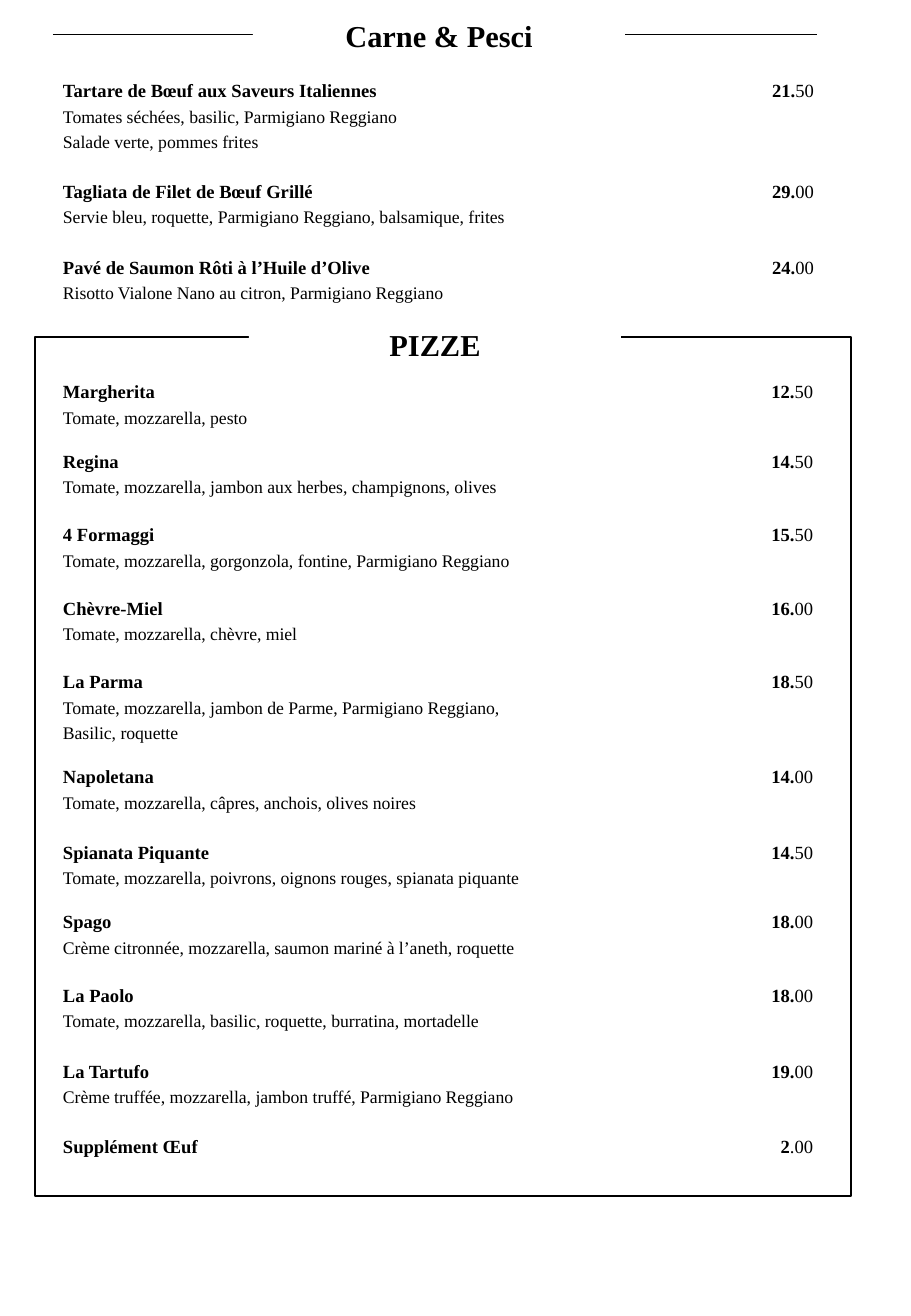
from dataclasses import dataclass

from lxml import etree
from pptx import Presentation, util as u
from pptx.dml.color import RGBColor
from pptx.enum import shapes, text
from pptx.oxml.ns import qn

# Each dish: gap above in px, name, price whole part, price decimals, description lines
MEATS = [
    (0, "Tartare de Bœuf aux Saveurs Italiennes", "21.", "50",
     ["Tomates séchées, basilic, Parmigiano Reggiano", "Salade verte, pommes frites"]),
    (25, "Tagliata de Filet de Bœuf Grillé", "29.", "00",
     ["Servie bleu, roquette, Parmigiano Reggiano, balsamique, frites"]),
    (25, "Pavé de Saumon Rôti à l’Huile d’Olive", "24.", "00",
     ["Risotto Vialone Nano au citron, Parmigiano Reggiano"]),
]
PIZZAS = [
    (0, "Margherita", "12.", "50", ["Tomate, mozzarella, pesto"]),
    (19, "Regina", "14.", "50",
     ["Tomate, mozzarella, jambon aux herbes, champignons, olives"]),
    (23, "4 Formaggi", "15.", "50",
     ["Tomate, mozzarella, gorgonzola, fontine, Parmigiano Reggiano"]),
    (23, "Chèvre-Miel", "16.", "00", ["Tomate, mozzarella, chèvre, miel"]),
    (23, "La Parma", "18.", "50",
     ["Tomate, mozzarella, jambon de Parme, Parmigiano Reggiano,", "Basilic, roquette"]),
    (19, "Napoletana", "14.", "00", ["Tomate, mozzarella, câpres, anchois, olives noires"]),
    (25, "Spianata Piquante", "14.", "50",
     ["Tomate, mozzarella, poivrons, oignons rouges, spianata piquante"]),
    (19, "Spago", "18.", "00",
     ["Crème citronnée, mozzarella, saumon mariné à l’aneth, roquette"]),
    (23, "La Paolo", "18.", "00",
     ["Tomate, mozzarella, basilic, roquette, burratina, mortadelle"]),
    (25, "La Tartufo", "19.", "00",
     ["Crème truffée, mozzarella, jambon truffé, Parmigiano Reggiano"]),
    (25, "Supplément Œuf", "2", ".00", []),
]


@dataclass(frozen=True)
class Theme:
    font: str = "Times New Roman"
    ink: RGBColor = RGBColor(0, 0, 0)
    paper: RGBColor = RGBColor(255, 255, 255)
    heading: float = 18
    dish: float = 11
    description: float = 10.5
    leading: float = 15
    rule: float = 0.5
    frame: float = 1


THEME = Theme()


def px(length):
    return round(length * 914400 / 121.5)


def box(left, top, width, height):
    return px(left), px(top), px(width), px(height)


def add_run(paragraph, words, size, bold=False):
    run = paragraph.add_run()
    run.text = words
    run.font.name = THEME.font
    run.font.size = u.Pt(size)
    run.font.bold = bold
    run.font.color.rgb = THEME.ink


def clear_margins(frame):
    frame.margin_left = frame.margin_top = frame.margin_right = frame.margin_bottom = 0
    frame.vertical_anchor = text.MSO_ANCHOR.TOP
    frame.word_wrap = True


def add_rectangle(slide, area):
    rectangle = slide.shapes.add_shape(shapes.MSO_SHAPE.RECTANGLE, *box(*area))
    rectangle.shadow.inherit = False
    return rectangle


def add_heading(slide, words, area):
    """Write a heading on a paper-coloured plate that interrupts the line behind it."""
    plate = add_rectangle(slide, area)
    plate.fill.solid()
    plate.fill.fore_color.rgb = THEME.paper
    plate.line.fill.background()
    clear_margins(plate.text_frame)
    paragraph = plate.text_frame.paragraphs[0]
    paragraph.alignment = text.PP_ALIGN.CENTER
    add_run(paragraph, words, THEME.heading, True)


def add_dishes(slide, dishes, area, tab_position, tab_alignment):
    frame = slide.shapes.add_textbox(*box(*area)).text_frame
    clear_margins(frame)
    unused = [frame.paragraphs[0]]

    def add_line(gap=0):
        paragraph = unused.pop() if unused else frame.add_paragraph()
        paragraph.line_spacing = u.Pt(THEME.leading)
        paragraph.space_before = px(gap)
        return paragraph

    for gap, dish, whole, decimals, descriptions in dishes:
        title = add_line(gap)
        tabs = etree.SubElement(title._p.get_or_add_pPr(), qn("a:tabLst"))
        etree.SubElement(tabs, qn("a:tab"), pos=str(px(tab_position)), algn=tab_alignment)
        add_run(title, f"{dish}\t{whole}", THEME.dish, True)
        add_run(title, decimals, THEME.dish)
        for description in descriptions:
            add_run(add_line(), description, THEME.description)


def add_rule(slide, left, right, y):
    rule = slide.shapes.add_connector(
        shapes.MSO_CONNECTOR.STRAIGHT, px(left), px(y), px(right), px(y))
    rule.line.color.rgb = THEME.ink
    rule.line.width = u.Pt(THEME.rule)
    etree.SubElement(rule._element.spPr, qn("a:effectLst"))


def add_frame(slide, area):
    border = add_rectangle(slide, area)
    border.fill.background()
    border.line.color.rgb = THEME.ink
    border.line.width = u.Pt(THEME.frame)


def main():
    menu = Presentation()
    menu.slide_width, menu.slide_height = px(911), px(1316)
    slide = menu.slides.add_slide(menu.slide_layouts[6])

    add_dishes(slide, MEATS, (63, 76, 785, 255), 751, "r")
    add_rule(slide, 53, 817, 34)
    add_heading(slide, "Carne & Pesci", (253, 17, 372, 36))

    add_dishes(slide, PIZZAS, (63, 377, 789, 798), 727, "dec")
    add_frame(slide, (35, 337, 816, 859))
    add_heading(slide, "PIZZE", (249, 326, 372, 35))

    menu.save("out.pptx")


if __name__ == "__main__":
    main()
